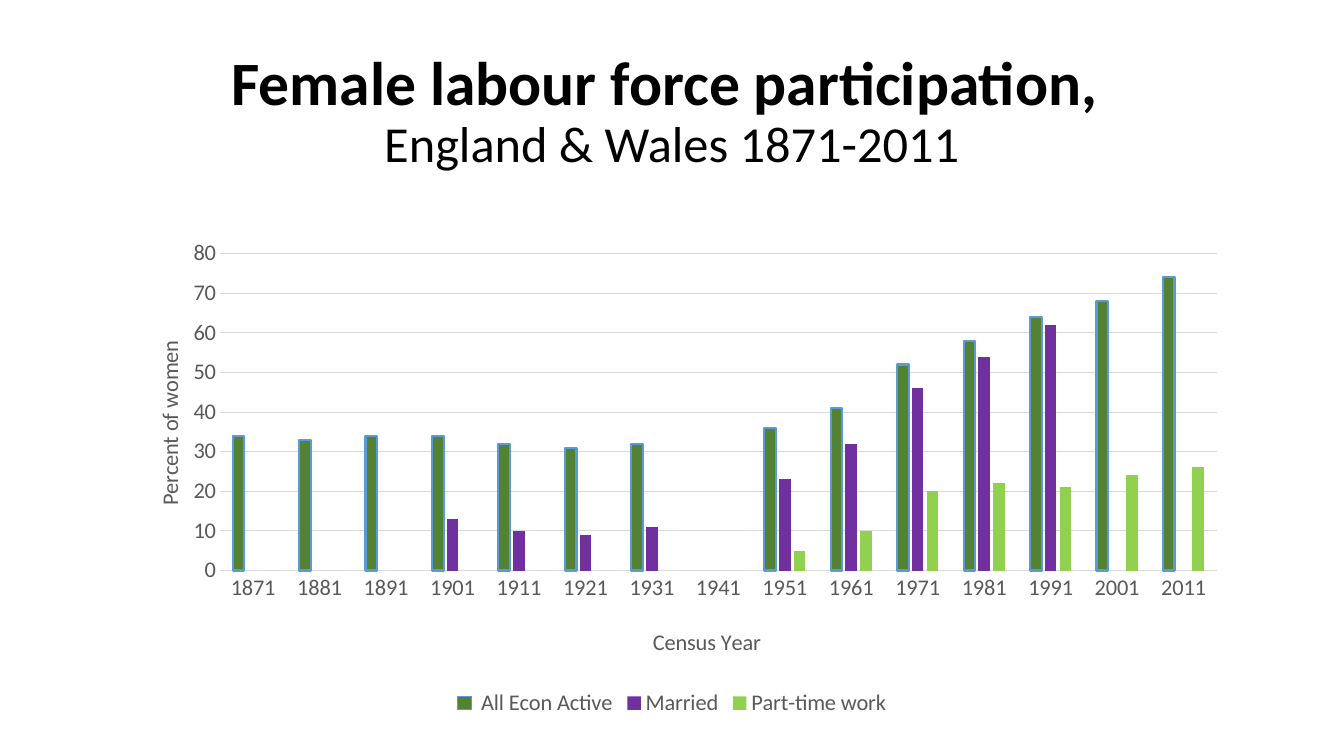
from dataclasses import dataclass

from lxml import etree
from pptx import Presentation
from pptx import util as u
from pptx.chart import data as chart_data
from pptx.dml.color import RGBColor
from pptx.enum import chart as chart_enum
from pptx.enum import text
from pptx.oxml import ns


@dataclass(frozen=True)
class Theme:
    font: str = "Calibri"
    title_size: int = 44
    subtitle_size: int = 36
    chart_size: int = 16
    ink: str = "000000"
    muted: str = "595959"
    grid: str = "D9D9D9"
    outline: str = "5B9BD5"
    bars: tuple = ("548235", "7030A0", "92D050")


THEME = Theme()
YEARS = [str(year) for year in range(1871, 2012, 10)]
PARTICIPATION = {
    " All Econ Active": [34, 33, 34, 34, 32, 31, 32, None, 36, 41, 52, 58, 64, 68, 74],
    "Married": [None] * 3 + [13, 10, 9, 11, None, 23, 32, 46, 54, 62, None, None],
    "Part-time work": [None] * 8 + [5, 10, 20, 22, 21, 24, 26],
}


def px(length):
    return u.Emu(length * 9525)


def style_font(font, size, color, bold=False):
    font.name = THEME.font
    font.size = u.Pt(size)
    font.bold = bold
    font.color.rgb = RGBColor.from_string(color)


def style_line(line, color, width):
    line.color.rgb = RGBColor.from_string(color)
    line.width = u.Pt(width)


def set_layout(element, **values):
    for old_layout in element.findall(ns.qn("c:layout")):
        element.remove(old_layout)
    layout = etree.Element(ns.qn("c:layout"))
    manual = etree.SubElement(layout, ns.qn("c:manualLayout"))
    for name, value in values.items():
        etree.SubElement(manual, ns.qn(f"c:{name}"), val=str(value))
    element.insert(len(element.findall(ns.qn("c:tx"))), layout)


def add_title(slide, left, top, width, height):
    frame = slide.shapes.add_textbox(px(left), px(top), px(width), px(height)).text_frame
    frame.word_wrap = True
    frame.vertical_anchor = text.MSO_ANCHOR.MIDDLE
    paragraph = frame.paragraphs[0]
    paragraph.alignment = text.PP_ALIGN.CENTER
    paragraph.line_spacing = 0.9
    heading = paragraph.add_run()
    heading.text = "Female labour force participation, "
    style_font(heading.font, THEME.title_size, THEME.ink, bold=True)
    paragraph.add_line_break()
    subtitle = paragraph.add_run()
    subtitle.text = "England & Wales 1871-2011"
    style_font(subtitle.font, THEME.subtitle_size, THEME.ink)


def style_axis(axis, title, x, y):
    axis.major_tick_mark = chart_enum.XL_TICK_MARK.NONE
    axis.minor_tick_mark = chart_enum.XL_TICK_MARK.NONE
    style_font(axis.tick_labels.font, THEME.chart_size, THEME.muted)
    run = axis.axis_title.text_frame.paragraphs[0].add_run()
    run.text = title
    style_font(run.font, THEME.chart_size, THEME.muted)
    set_layout(axis.axis_title._element, xMode="edge", yMode="edge", x=x, y=y)


def add_participation_chart(slide, left, top, width, height):
    content = chart_data.CategoryChartData()
    content.categories = YEARS
    for name, values in PARTICIPATION.items():
        content.add_series(name, values)
    chart = slide.shapes.add_chart(
        chart_enum.XL_CHART_TYPE.COLUMN_CLUSTERED,
        px(left), px(top), px(width), px(height), content,
    ).chart
    chart.has_title = False
    style_font(chart.font, THEME.chart_size, THEME.ink)

    plot = chart.plots[0]
    plot.vary_by_categories = False
    plot.gap_width = 219
    plot.overlap = -27
    for series, color in zip(plot.series, THEME.bars):
        series.invert_if_negative = False
        series.format.fill.solid()
        series.format.fill.fore_color.rgb = RGBColor.from_string(color)
    style_line(plot.series[0].format.line, THEME.outline, 1.5)

    style_axis(chart.category_axis, "Census Year", x=0.48, y=0.81)
    style_line(chart.category_axis.format.line, THEME.grid, 0.75)
    percent_axis = chart.value_axis
    style_axis(percent_axis, "Percent of women", x=0.05, y=0.26)
    percent_axis.minimum_scale = 0
    percent_axis.maximum_scale = 80
    percent_axis.major_unit = 10
    percent_axis.format.line.fill.background()
    style_line(percent_axis.major_gridlines.format.line, THEME.grid, 0.75)

    chart.has_legend = True
    chart.legend.position = chart_enum.XL_LEGEND_POSITION.BOTTOM
    chart.legend.include_in_layout = False
    style_font(chart.legend.font, THEME.chart_size, THEME.muted)
    plot_area = chart.element.find(f".//{ns.qn('c:plotArea')}")
    set_layout(
        plot_area,
        layoutTarget="inner", xMode="edge", yMode="edge",
        x=0.11, y=0.1, w=0.86, h=0.61,
    )


def main():
    presentation = Presentation()
    presentation.slide_width = px(1280)
    presentation.slide_height = px(720)
    slide = presentation.slides.add_slide(presentation.slide_layouts[6])
    add_title(slide, 88, 38, 1104, 139)
    add_participation_chart(slide, 88, 192, 1104, 495)
    presentation.save("out.pptx")


if __name__ == "__main__":
    main()
